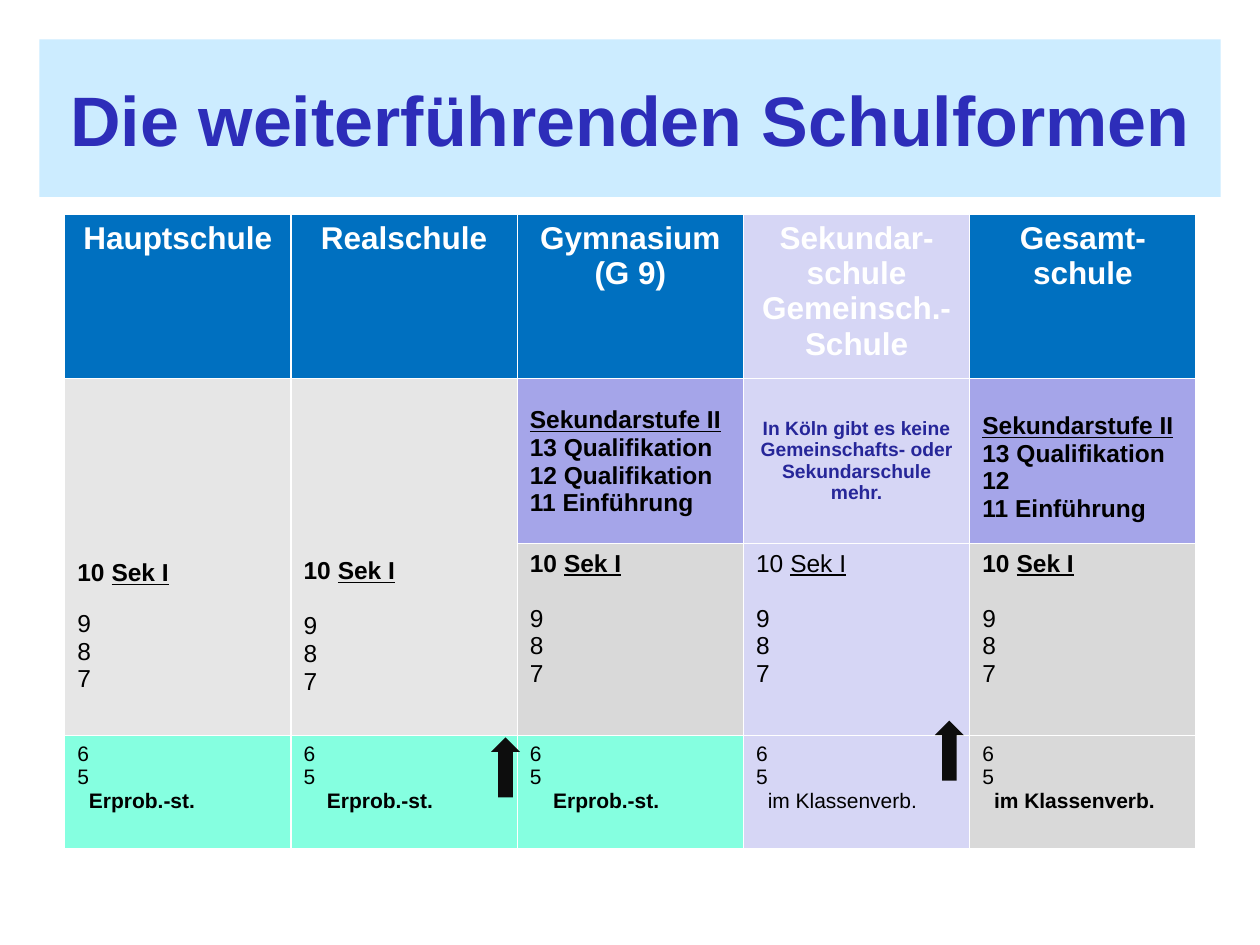
from pptx import Presentation
from pptx.dml.color import RGBColor
from pptx.enum.shapes import MSO_SHAPE
from pptx.enum.text import MSO_ANCHOR, MSO_AUTO_SIZE, PP_ALIGN
from pptx.util import Pt


def paint(target, color):
    target.fill.solid()
    target.fill.fore_color.rgb = RGBColor.from_string(color)


def write(frame, lines, size, color="000000", bold=False, align=PP_ALIGN.LEFT):
    frame.text = "\n".join(lines)
    for paragraph in frame.paragraphs:
        paragraph.alignment = align
        paragraph.font.name = "Arial"
        paragraph.font.size = Pt(size)
        paragraph.font.bold = bold
        paragraph.font.color.rgb = RGBColor.from_string(color)
    return frame.paragraphs


BLUE, LILAC, VIOLET = "0070C0", "D6D6F5", "A5A5E9"
LIGHT_GRAY, GRAY, MINT = "E6E6E6", "D9D9D9", "85FFE0"

presentation = Presentation()
presentation.slide_width = Pt(720)
presentation.slide_height = Pt(540)
slide = presentation.slides.add_slide(presentation.slide_layouts[5])

title = slide.shapes.title
title.left, title.top, title.width, title.height = Pt(22.5), Pt(22.5), Pt(675), Pt(90)
paint(title, "CCECFF")
write(title.text_frame, ["Die weiterführenden Schulformen"], 40, "2D2DB9", True, PP_ALIGN.CENTER)
title.text_frame.vertical_anchor = MSO_ANCHOR.MIDDLE
title.text_frame.auto_size = MSO_AUTO_SIZE.NONE

row_heights = [93.6, 94.4, 109.8, 64.8]
table = slide.shapes.add_table(4, 5, Pt(37), Pt(122.6), Pt(646.5), Pt(sum(row_heights))).table
for column in table.columns:
    column.width = Pt(129.3)
for row, height in zip(table.rows, row_heights):
    row.height = Pt(height)
for column in range(2):
    table.cell(1, column).merge(table.cell(2, column))

headers = [
    (["Hauptschule"], BLUE),
    (["Realschule"], BLUE),
    (["Gymnasium", "(G 9)"], BLUE),
    (["Sekundar-schule", "Gemeinsch.-", "Schule"], LILAC),
    (["Gesamt-schule"], BLUE),
]
for column, (lines, fill) in enumerate(headers):
    cell = table.cell(0, column)
    paint(cell, fill)
    write(cell.text_frame, lines, 18, "FFFFFF", True, PP_ALIGN.CENTER)

upper_levels = [
    (2, "12 Qualifikation", 16.2),
    (4, "12", 19.6),
]
for column, grade_12, top in upper_levels:
    cell = table.cell(1, column)
    paint(cell, VIOLET)
    cell.margin_top = Pt(top)
    lines = ["Sekundarstufe II", "13 Qualifikation", grade_12, "11 Einführung"]
    heading = write(cell.text_frame, lines, 14, bold=True)[0]
    heading.runs[0].font.underline = True

notice = table.cell(1, 3)
paint(notice, LILAC)
notice.vertical_anchor = MSO_ANCHOR.MIDDLE
write(notice.text_frame, ["In Köln gibt es keine Gemeinschafts- oder Sekundarschule mehr."],
      11, "262699", True, PP_ALIGN.CENTER)

middle_levels = [
    (1, LIGHT_GRAY, True, 103.6, 13.4),
    (1, LIGHT_GRAY, True, 102.5, 15.7),
    (2, GRAY, True, 3.6, 15.7),
    (2, LILAC, False, 3.6, 15.7),
    (2, GRAY, True, 3.6, 15.7),
]
for column, (row, fill, bold, top, gap) in enumerate(middle_levels):
    cell = table.cell(row, column)
    paint(cell, fill)
    cell.margin_top = Pt(top)
    paragraphs = write(cell.text_frame, ["10 ", "9", "8", "7"], 14)
    paragraphs[0].font.bold = bold
    level = paragraphs[0].add_run()
    level.text = "Sek I"
    level.font.underline = True
    paragraphs[1].space_before = Pt(gap)

lower_levels = [
    ("Erprob.-st.", MINT, True, 6.67),
    ("Erprob.-st.", MINT, True, 13.34),
    ("Erprob.-st.", MINT, True, 13.34),
    ("im Klassenverb.", LILAC, False, 6.67),
    ("im Klassenverb.", GRAY, True, 6.67),
]
for column, (label, fill, bold, indent) in enumerate(lower_levels):
    cell = table.cell(3, column)
    paint(cell, fill)
    label_paragraph = write(cell.text_frame, ["6", "5", label], 12)[-1]
    label_paragraph.font.bold = bold
    label_paragraph._p.get_or_add_pPr().set("marL", str(Pt(indent)))

for left, top in [(280.6, 421.4), (534.2, 411.8)]:
    arrow = slide.shapes.add_shape(MSO_SHAPE.UP_ARROW, Pt(left), Pt(top), Pt(16.6), Pt(34.3))
    arrow.shadow.inherit = False
    paint(arrow, "0D0D0D")
    arrow.line.fill.background()

presentation.save("out.pptx")
